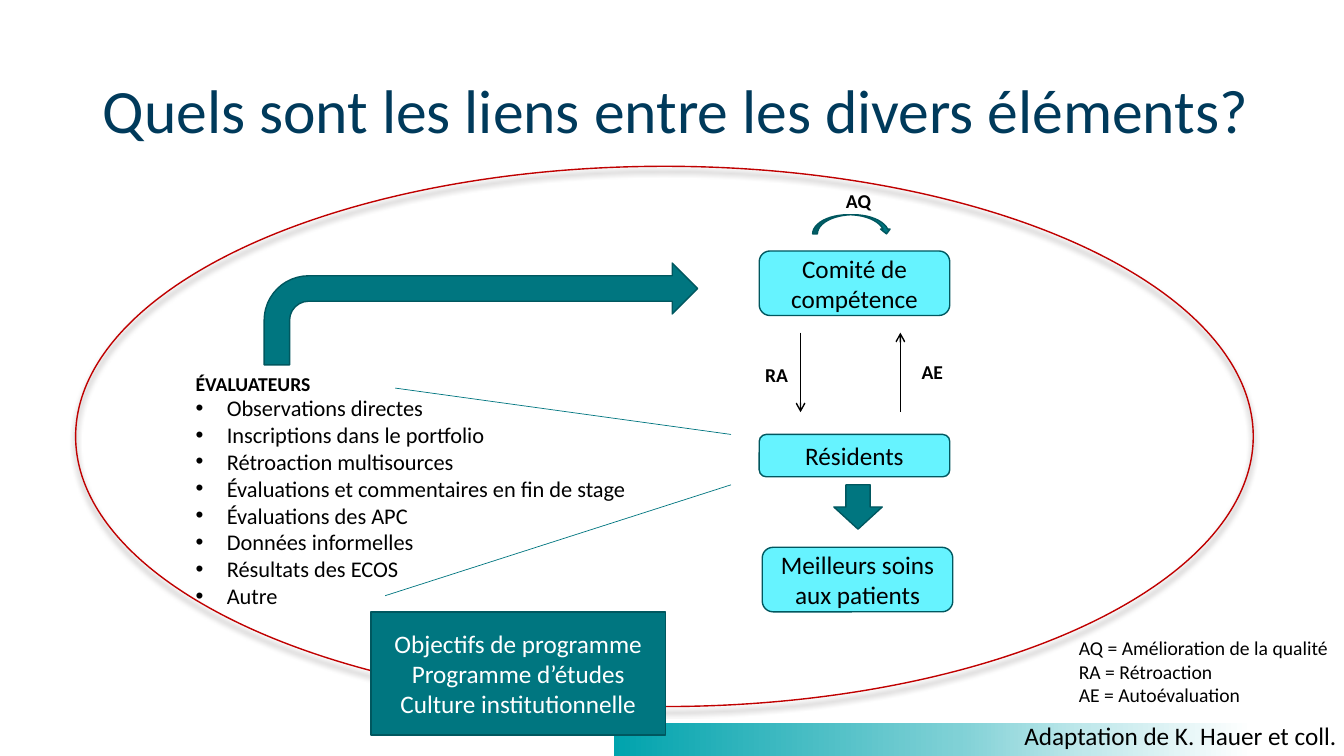
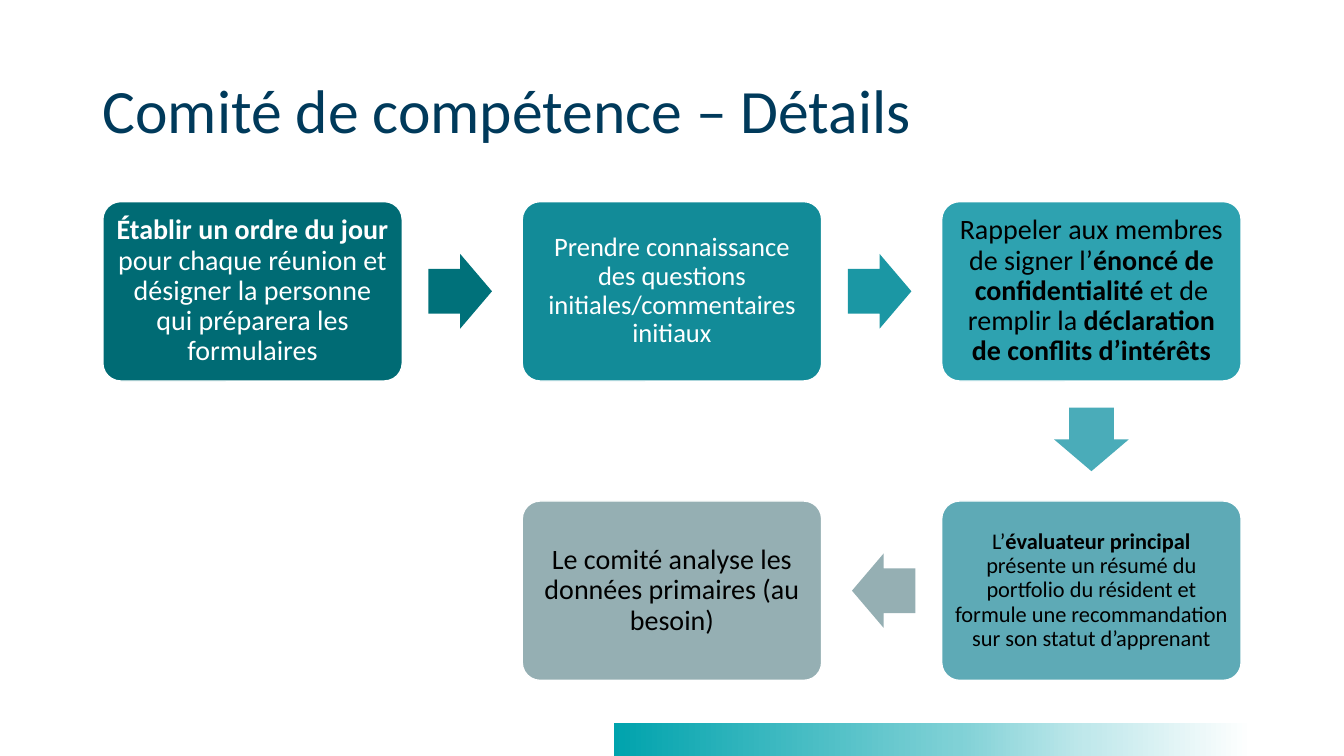
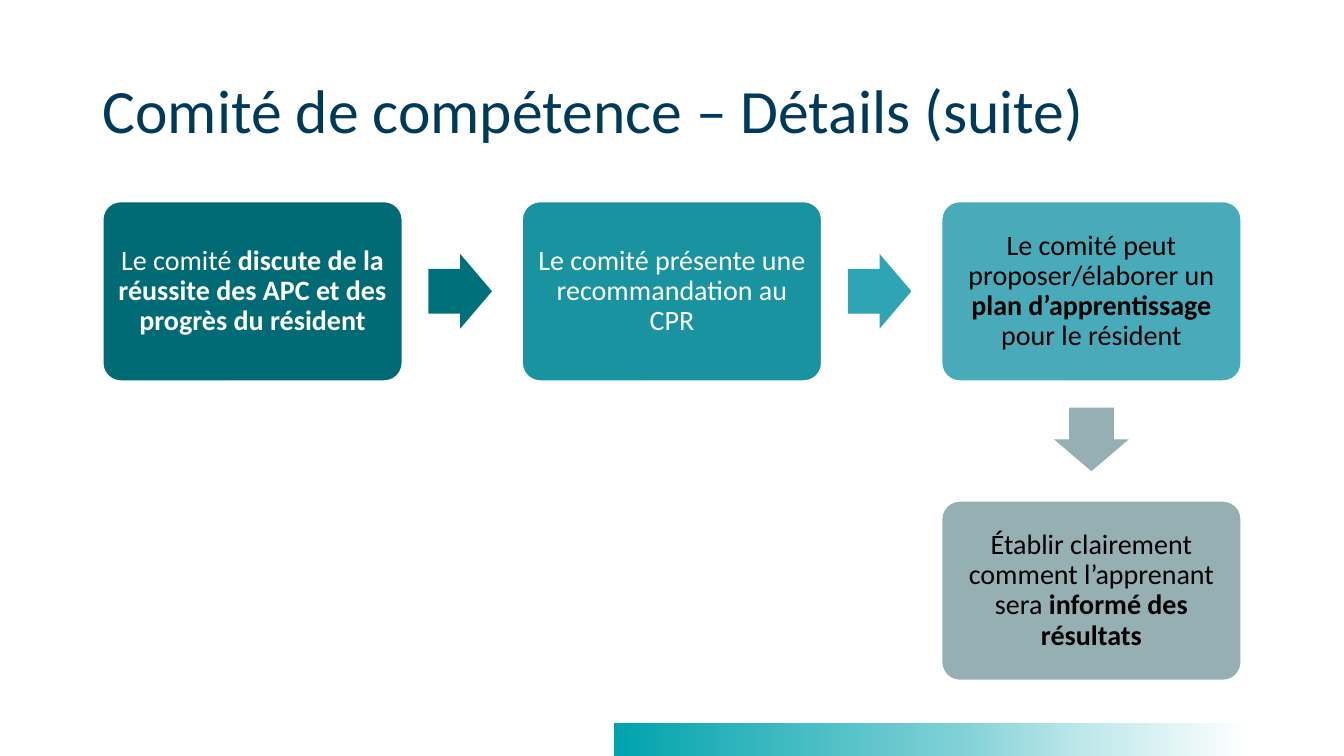
import math

from lxml import etree
from pptx import Presentation
from pptx import util as u
from pptx.dml import color
from pptx.enum import shapes, text
from pptx.oxml import ns

SCALE = 9144
FONT = "Calibri"
NAVY, TEAL, EDGE, AQUA = "003A5B", "007680", "00575F", "66F3FF"
BLACK, WHITE, RED = "000000", "FFFFFF", "C00000"
BAND_STOPS = [(0, "00A3AD"), (54, "80D1D6"), (74, "C0E8EB"), (100, WHITE)]
KIND = shapes.MSO_SHAPE
PAD = (13, 7)


def px(length):
    return u.Emu(round(length * SCALE))


def rgb(value):
    return color.RGBColor.from_string(value)


def add_xml(parent, tag, **attributes):
    return etree.SubElement(parent, ns.qn(tag), {k: str(v) for k, v in attributes.items()})


def write(frame, content, size=18, ink=BLACK, bold=False, align="LEFT", anchor="TOP",
          spacing=None, pad=PAD, wrap=True, grow=False, bullet=None):
    frame.word_wrap = wrap
    frame.auto_size = text.MSO_AUTO_SIZE.SHAPE_TO_FIT_TEXT if grow else text.MSO_AUTO_SIZE.NONE
    frame.vertical_anchor = text.MSO_ANCHOR[anchor]
    frame.margin_left = frame.margin_right = px(pad[0])
    frame.margin_top = frame.margin_bottom = px(pad[1])
    for number, line in enumerate(content.split("\n")):
        paragraph = frame.add_paragraph() if number else frame.paragraphs[0]
        paragraph.alignment = text.PP_ALIGN[align]
        if spacing:
            paragraph.line_spacing = spacing
        if bullet:
            properties = paragraph._p.get_or_add_pPr()
            properties.set("marL", str(px(31)))
            properties.set("indent", str(px(-31)))
            add_xml(properties, "a:buFont", typeface="Arial")
            add_xml(properties, "a:buChar", char=bullet)
        for part, words in enumerate(line.split("**")):
            if words:
                run = paragraph.add_run()
                run.text = words
                run.font.name = FONT
                run.font.size = u.Pt(size)
                run.font.bold = bold or part % 2 == 1
                run.font.color.rgb = rgb(ink)


class Deck:
    CELL = (297, 178)
    PITCH = (416, 297)
    ORIGIN = (102, 200)
    ARROW = (63, 74)
    REACH = (206, 147)

    def __init__(self):
        self.show = Presentation()
        self.show.slide_width, self.show.slide_height = px(1333), px(750)
        self.slide = None

    def start(self):
        self.slide = self.show.slides.add_slide(self.show.slide_layouts[6])
        band = self.shape(KIND.RECTANGLE, (609, 717, 633, 33))
        band.fill.gradient()
        band.fill.gradient_angle = 0
        stops = band.element.spPr.find(".//" + ns.qn("a:gsLst"))
        for stop in list(stops):
            stops.remove(stop)
        for position, tint in BAND_STOPS:
            add_xml(add_xml(stops, "a:gs", pos=position * 1000), "a:srgbClr", val=tint)

    def title(self, content, width):
        self.label(content, (92, 40, width, 145), size=44, ink=NAVY, anchor="MIDDLE",
                   spacing=0.9, pad=(10, 5), wrap=True, grow=False)

    def shape(self, kind, box, fill=None, line=None, content=None, **style):
        item = self.slide.shapes.add_shape(kind, *map(px, box))
        item.shadow.inherit = False
        if fill:
            item.fill.solid()
            item.fill.fore_color.rgb = rgb(fill)
        else:
            item.fill.background()
        if line:
            item.line.color.rgb = rgb(line)
            item.line.width = u.Pt(1)
        else:
            item.line.fill.background()
        if content:
            write(item.text_frame, content, align="CENTER", anchor="MIDDLE", **style)
        return item

    def label(self, content, box, **style):
        frame = self.slide.shapes.add_textbox(*map(px, box)).text_frame
        write(frame, content, **{"wrap": False, "grow": True, **style})

    def line(self, start, end, ink, width, arrow=False):
        link = self.slide.shapes.add_connector(
            shapes.MSO_CONNECTOR.STRAIGHT, *map(px, start + end))
        link.line.color.rgb = rgb(ink)
        link.line.width = u.Pt(width)
        if arrow:
            add_xml(link.line._get_or_add_ln(), "a:tailEnd", type="arrow")
        add_xml(link.element.spPr, "a:effectLst")

    def ring(self, box, ink, shade):
        oval = self.shape(KIND.OVAL, box, line=ink)
        effects = oval.element.spPr.find(ns.qn("a:effectLst"))
        shadow = add_xml(effects, "a:outerShdw", blurRad=u.Pt(4), dist=u.Pt(4),
                         dir=90 * 60000, algn="t", rotWithShape=0)
        add_xml(shadow, "a:srgbClr", val=shade)

    def step(self, cell, content, fill, ink=BLACK, size=20, pad=8):
        corner = [o + p * c for o, p, c in zip(self.ORIGIN, self.PITCH, cell)]
        box = self.shape(KIND.ROUNDED_RECTANGLE, (*corner, *self.CELL), fill, WHITE, content,
                         ink=ink, size=size, spacing=0.9, pad=(pad, pad))
        box.adjustments[0] = 0.1
        return corner

    def flow(self, steps, arrow_fills):
        for number, (cell, content, fill, style) in enumerate(steps):
            corner = self.step(cell, content, fill, **style)
            if number < len(arrow_fills):
                heading = [b - a for a, b in zip(cell, steps[number + 1][0])]
                place = [c + s // 2 + r * h - a // 2 for c, s, r, h, a in
                         zip(corner, self.CELL, self.REACH, heading, self.ARROW)]
                arrow = self.shape(KIND.RIGHT_ARROW, (*place, *self.ARROW), arrow_fills[number])
                arrow.adjustments[0] = 0.6
                arrow.rotation = math.degrees(math.atan2(heading[1], heading[0]))


def links_slide(deck):
    deck.start()
    deck.ring((75, 165, 1168, 536), RED, "767171")
    deck.title("Quels sont les liens entre les divers éléments?", 1179)
    deck.label("Observations directes\nInscriptions dans le portfolio\nRétroaction multisources\n"
               "Évaluations et commentaires en fin de stage\nÉvaluations des APC\n"
               "Données informelles\nRésultats des ECOS\nAutre",
               (181, 384, 459, 229), size=16, bullet="•")
    for heading, box in [("ÉVALUATEURS", (181, 362, 142, 37)), ("RA", (746, 353, 50, 37)),
                         ("AE", (901, 350, 48, 37)), ("AQ", (826, 180, 52, 37))]:
        deck.label(heading, box, size=14, bold=True)
    deck.label("AQ = Amélioration de la qualité\nRA = Rétroaction\nAE = Autoévaluation",
               (1057, 624, 277, 84), size=14)
    for actor, box in [("Comité de compétence", (753, 249, 189, 64)),
                       ("Résidents", (753, 431, 189, 42)),
                       ("Meilleurs soins aux patients", (756, 543, 189, 64))]:
        deck.shape(KIND.ROUNDED_RECTANGLE, box, AQUA, EDGE, actor)
    deck.line((794, 330), (794, 409), BLACK, 1, arrow=True)
    deck.line((893, 409), (893, 330), BLACK, 1, arrow=True)
    deck.line((392, 385), (725, 431), TEAL, 0.5)
    deck.line((382, 591), (725, 481), TEAL, 0.5)
    for kind, box in [(KIND.DOWN_ARROW, (827, 481, 48, 44)),
                      (KIND.CURVED_DOWN_ARROW, (806, 213, 78, 19)),
                      (KIND.BENT_ARROW, (262, 261, 430, 101))]:
        deck.shape(kind, box, TEAL, EDGE)
    deck.shape(KIND.RECTANGLE, (368, 607, 292, 122), TEAL, EDGE,
               "Objectifs de programme Programme d’études\nCulture institutionnelle", ink=WHITE)
    deck.label("Adaptation de K. Hauer et coll.", (1003, 708, 340, 44))


def details_slide(deck):
    deck.start()
    deck.title("Comité de compétence – Détails", 1150)
    deck.flow([
        ((0, 0), "**Établir un ordre du jour **pour chaque réunion et désigner la personne "
                 "qui préparera les formulaires", "006B74", {"ink": WHITE}),
        ((1, 0), "Prendre connaissance des questions initiales/commentaires initiaux",
         "128B98", {"ink": WHITE, "size": 19}),
        ((2, 0), "Rappeler aux membres de signer l’**énoncé de confidentialité** et de "
                 "remplir la **déclaration de conflits d’intérêts**", "2EA2B0", {}),
        ((2, 1), "L’**évaluateur principal **présente un résumé du portfolio du résident et "
                 "formule une recommandation sur son statut d’apprenant",
         "5EAAB6", {"size": 16, "pad": 7}),
        ((1, 1), "Le comité analyse les données primaires (au besoin)", "95AFB3", {}),
    ], ["00717A", "1B97A4", "4AACB9", "95AFB3"])


def details_continued_slide(deck):
    deck.start()
    deck.title("Comité de compétence – Détails (suite)", 1168)
    deck.flow([
        ((0, 0), "Le comité **discute de la réussite des APC et des progrès du résident**",
         "006B74", {"ink": WHITE}),
        ((1, 0), "Le comité présente une recommandation au CPR", "1A93A1", {"ink": WHITE}),
        ((2, 0), "Le comité peut proposer/élaborer un **plan d’apprentissage **pour le résident",
         "49ABB9", {}),
        ((2, 1), "Établir clairement comment l’apprenant sera **informé des résultats**",
         "95AFB3", {}),
    ], ["00717A", "2FA4B2", "95AFB3"])


def main():
    deck = Deck()
    links_slide(deck)
    details_slide(deck)
    details_continued_slide(deck)
    deck.show.save("out.pptx")


if __name__ == "__main__":
    main()
